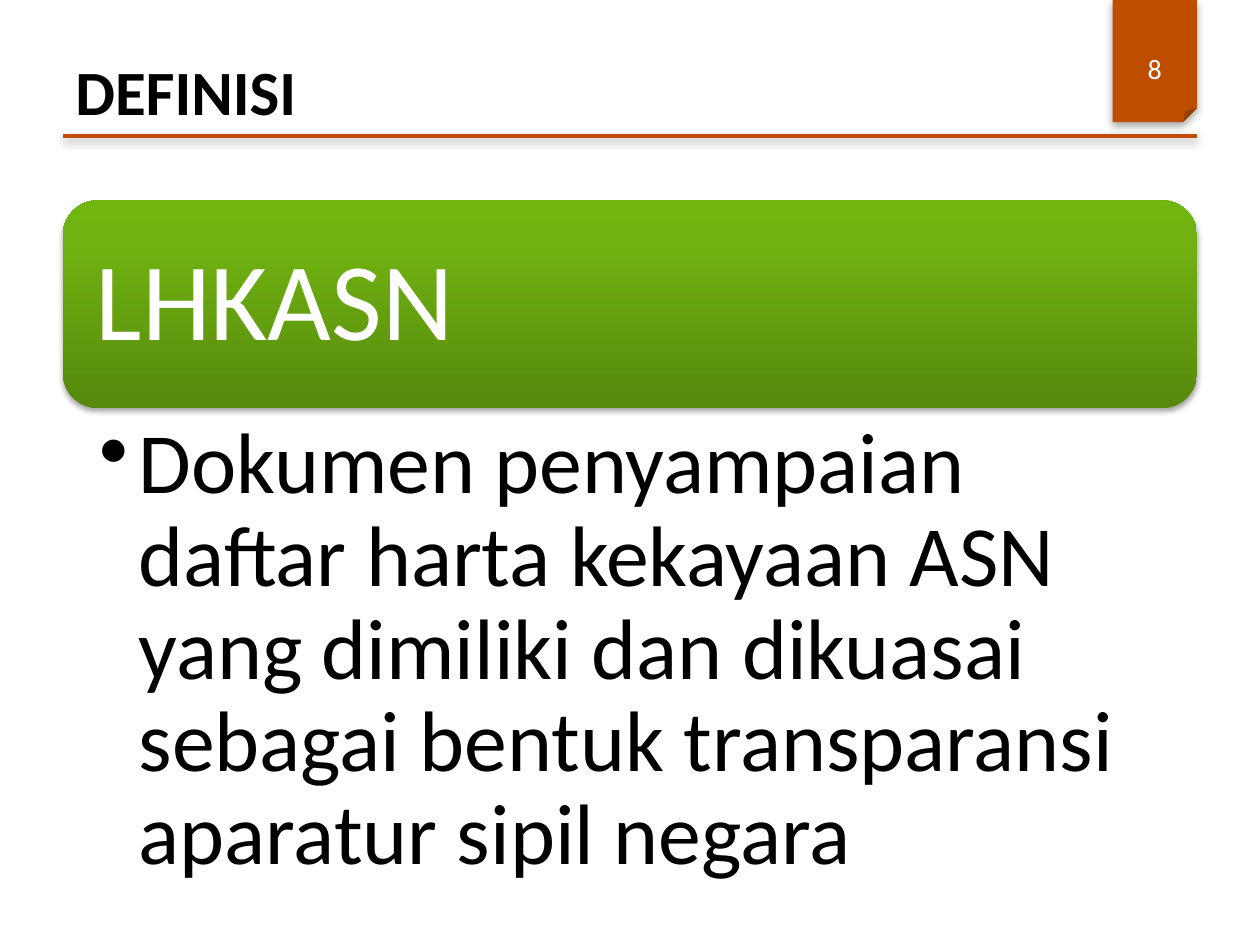
from copy import deepcopy

from lxml import etree
from pptx import Presentation
from pptx.dml.color import RGBColor
from pptx.enum import shapes, text
from pptx.oxml.ns import qn
from pptx.util import Inches, Pt

FONT = "Calibri"
BLACK = RGBColor(0x00, 0x00, 0x00)
WHITE = RGBColor(0xFF, 0xFF, 0xFF)
ORANGE = RGBColor(0xBF, 0x4D, 0x00)
GREEN_STOPS = [
    (0, RGBColor(0x56, 0x89, 0x0D)),
    (0.8, RGBColor(0x70, 0xB2, 0x11)),
    (1, RGBColor(0x71, 0xB6, 0x0E)),
]
MARGIN, CONTENT_WIDTH = 0.5, 9
BANNER_TOP, BANNER_HEIGHT = 1.59, 1.65
TAB_LEFT, TAB_WIDTH = 8.83, 0.67


def add_shadow(element, blur, distance, opacity):
    """Give the element a soft black shadow that falls straight down."""
    properties = element.spPr
    effects = properties.find(qn("a:effectLst"))
    if effects is None:
        effects = etree.SubElement(properties, qn("a:effectLst"))
    shadow = etree.SubElement(
        effects, qn("a:outerShdw"), blurRad=str(Pt(blur)), dist=str(Pt(distance)),
        dir="5400000", rotWithShape="0")
    color = etree.SubElement(shadow, qn("a:srgbClr"), val=str(BLACK))
    etree.SubElement(color, qn("a:alpha"), val=str(opacity * 1000))


def add_panel(slide, kind, box, blur):
    panel = slide.shapes.add_shape(kind, *map(Inches, box))
    panel.line.fill.background()
    panel.shadow.inherit = False
    add_shadow(panel._element, blur, 1.8, 35)
    return panel


def fill_gradient(panel, stops):
    """Fill the panel from bottom to top with three or more stops."""
    panel.fill.gradient()
    panel.fill.gradient_angle = 90
    stop_list = panel._element.spPr.find(qn("a:gradFill")).find(qn("a:gsLst"))
    for _ in stops[2:]:
        stop_list.append(deepcopy(stop_list[0]))
    for stop, (position, color) in zip(panel.fill.gradient_stops, stops):
        stop.position = position
        stop.color.rgb = color


def add_rule(slide, top):
    rule = slide.shapes.add_connector(
        shapes.MSO_CONNECTOR.STRAIGHT, Inches(MARGIN), Inches(top),
        Inches(MARGIN + CONTENT_WIDTH), Inches(top))
    rule.line.color.rgb = ORANGE
    rule.line.width = Pt(2)
    add_shadow(rule._element, 5, 1.6, 38)


def add_label(slide, wording, box, font, color, insets=(0.1, 0.05, 0.1, 0.05),
              anchor=text.MSO_ANCHOR.MIDDLE, bullet_indent=None, **layout):
    """Add a one-paragraph text box; insets run left, top, right, bottom."""
    frame = slide.shapes.add_textbox(*map(Inches, box)).text_frame
    frame.word_wrap = True
    frame.vertical_anchor = anchor
    for side, inset in zip(("left", "top", "right", "bottom"), insets):
        setattr(frame, f"margin_{side}", Inches(inset))
    paragraph = frame.paragraphs[0]
    for name, value in layout.items():
        setattr(paragraph, name, value)
    if bullet_indent:
        properties = paragraph._p.get_or_add_pPr()
        properties.set("marL", str(Inches(bullet_indent)))
        properties.set("indent", str(-Inches(bullet_indent)))
        etree.SubElement(properties, qn("a:buChar"), char="•")
    run = paragraph.add_run()
    run.text = wording
    for name, value in {"name": FONT, **font}.items():
        setattr(run.font, name, value)
    run.font.color.rgb = color


def main():
    deck = Presentation()
    deck.slide_width, deck.slide_height = Inches(10), Inches(7.5)
    slide = deck.slides.add_slide(deck.slide_layouts[6])

    page_tab = add_panel(slide, shapes.MSO_SHAPE.FOLDED_CORNER,
                         (TAB_LEFT, 0, TAB_WIDTH, 0.97), blur=5)
    page_tab.fill.solid()
    page_tab.fill.fore_color.rgb = ORANGE
    add_rule(slide, 1.08)
    add_label(slide, "DEFINISI", (MARGIN, 0.3, CONTENT_WIDTH, 0.83),
              {"size": Pt(36), "bold": True}, BLACK)
    add_label(slide, "8", (TAB_LEFT, 0.33, TAB_WIDTH, 0.42),
              {"size": Pt(16)}, WHITE, alignment=text.PP_ALIGN.CENTER)

    banner_box = (MARGIN, BANNER_TOP, CONTENT_WIDTH, BANNER_HEIGHT)
    banner = add_panel(slide, shapes.MSO_SHAPE.ROUNDED_RECTANGLE, banner_box, blur=3.1)
    fill_gradient(banner, GREEN_STOPS)
    add_label(slide, "LHKASN", banner_box, {"size": Pt(63)}, WHITE,
              insets=(0.26,) * 4, line_spacing=0.9)
    add_label(slide,
              "Dokumen penyampaian daftar harta kekayaan ASN yang dimiliki dan "
              "dikuasai sebagai bentuk transparansi aparatur sipil negara",
              (MARGIN, BANNER_TOP + BANNER_HEIGHT, CONTENT_WIDTH, 3.92),
              {"size": Pt(49)}, BLACK, insets=(0.29, 0.09, 0.49, 0.09),
              anchor=text.MSO_ANCHOR.TOP, bullet_indent=0.31, line_spacing=0.9)

    deck.save("out.pptx")


if __name__ == "__main__":
    main()
